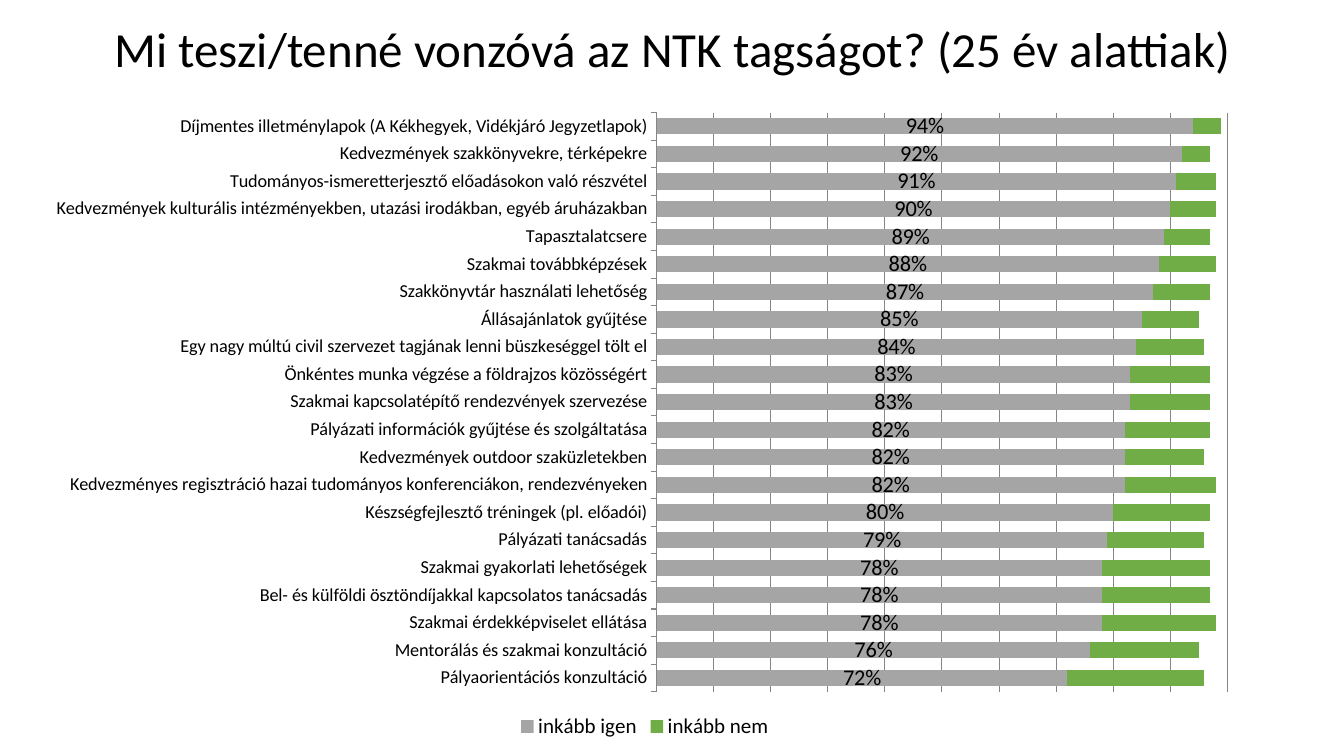
from pptx import Presentation
from pptx.chart.data import CategoryChartData
from pptx.dml.color import RGBColor
from pptx.enum.chart import XL_CHART_TYPE, XL_LEGEND_POSITION, XL_TICK_LABEL_POSITION, XL_TICK_MARK
from pptx.enum.text import MSO_ANCHOR, PP_ALIGN
from pptx.oxml import parse_xml
from pptx.oxml.ns import nsdecls
from pptx.util import Pt

TITLE = "Mi teszi/tenné vonzóvá az NTK tagságot? (25 év alattiak)"
NAMES = ("inkább igen", "inkább nem")
ROWS = [  # top to bottom: reason, yes, no
    ("Díjmentes illetménylapok (A Kékhegyek, Vidékjáró Jegyzetlapok)", 0.94, 0.05),
    ("Kedvezmények szakkönyvekre, térképekre", 0.92, 0.05),
    ("Tudományos-ismeretterjesztő előadásokon való részvétel", 0.91, 0.07),
    ("Kedvezmények kulturális intézményekben, utazási irodákban, egyéb áruházakban", 0.90, 0.08),
    ("Tapasztalatcsere", 0.89, 0.08),
    ("Szakmai továbbképzések", 0.88, 0.10),
    ("Szakkönyvtár használati lehetőség", 0.87, 0.10),
    ("Állásajánlatok gyűjtése", 0.85, 0.10),
    ("Egy nagy múltú civil szervezet tagjának lenni büszkeséggel tölt el", 0.84, 0.12),
    ("Önkéntes munka végzése a földrajzos közösségért", 0.83, 0.14),
    ("Szakmai kapcsolatépítő rendezvények szervezése", 0.83, 0.14),
    ("Pályázati információk gyűjtése és szolgáltatása", 0.82, 0.15),
    ("Kedvezmények outdoor szaküzletekben", 0.82, 0.14),
    ("Kedvezményes regisztráció hazai tudományos konferenciákon, rendezvényeken", 0.82, 0.16),
    ("Készségfejlesztő tréningek (pl. előadói)", 0.80, 0.17),
    ("Pályázati tanácsadás", 0.79, 0.17),
    ("Szakmai gyakorlati lehetőségek", 0.78, 0.19),
    ("Bel- és külföldi ösztöndíjakkal kapcsolatos tanácsadás", 0.78, 0.19),
    ("Szakmai érdekképviselet ellátása", 0.78, 0.20),
    ("Mentorálás és szakmai konzultáció", 0.76, 0.19),
    ("Pályaorientációs konzultáció", 0.72, 0.24),
]
PLOT = {"x": 0.51, "y": 0.02, "w": 0.47, "h": 0.9}  # shares of the chart frame

FACE = "Calibri"
BLACK = RGBColor(0x00, 0x00, 0x00)
LINE = RGBColor(0x86, 0x86, 0x86)
FILLS = (RGBColor(0xA5, 0xA5, 0xA5), RGBColor(0x70, 0xAD, 0x47))
PX = 9525  # 96 px to the inch


def box(*px):
    """Turn px lengths into EMU."""
    return [n * PX for n in px]


def style(font, size):
    font.name, font.size, font.bold = FACE, Pt(size), False
    font.color.rgb = BLACK


def add_title(slide):
    frame = slide.shapes.add_textbox(*box(89, 12, 1104, 74)).text_frame
    frame.word_wrap = True
    frame.vertical_anchor = MSO_ANCHOR.MIDDLE
    para = frame.paragraphs[0]
    para.text = TITLE
    para.alignment = PP_ALIGN.CENTER
    para.line_spacing = 0.9
    style(para.runs[0].font, 35)


def set_plot(chart):
    """Fix the inner plot area inside the chart frame."""
    parts = "".join(f'<c:{key} val="{val}"/>' for key, val in PLOT.items())
    area = chart.element.chart.plotArea
    for old in area.findall("{*}layout"):
        area.remove(old)
    area.insert(0, parse_xml(
        f'<c:layout {nsdecls("c")}><c:manualLayout><c:layoutTarget val="inner"/>'
        f'<c:xMode val="edge"/><c:yMode val="edge"/>{parts}</c:manualLayout></c:layout>'))


def add_bars(slide):
    data = CategoryChartData(number_format="0%")
    reasons, *votes = zip(*reversed(ROWS))
    data.categories = reasons
    for name, vals in zip(NAMES, votes):
        data.add_series(name, vals)
    chart = slide.shapes.add_chart(
        XL_CHART_TYPE.BAR_STACKED, *box(36, 95, 1156, 613), data).chart
    chart.has_title = False
    style(chart.font, 10)
    set_plot(chart)

    plot = chart.plots[0]
    plot.gap_width, plot.overlap = 70, 100
    plot.vary_by_categories = False
    for series, fill in zip(plot.series, FILLS):
        series.format.fill.solid()
        series.format.fill.fore_color.rgb = fill
    labels = plot.series[0].data_labels
    labels.show_value = True
    labels.number_format, labels.number_format_is_linked = "0%", False
    style(labels.font, 16)

    cat = chart.category_axis
    cat.major_tick_mark = XL_TICK_MARK.OUTSIDE
    cat.tick_label_position = XL_TICK_LABEL_POSITION.LOW
    cat.has_major_gridlines = False
    style(cat.tick_labels.font, 13)
    val = chart.value_axis
    val.minimum_scale, val.maximum_scale, val.major_unit = 0, 1, 0.1
    val.has_major_gridlines = True
    val.visible = False
    for line in (cat.format.line, val.major_gridlines.format.line):
        line.color.rgb = LINE
        line.width = Pt(0.75)

    chart.has_legend = True
    chart.legend.position = XL_LEGEND_POSITION.BOTTOM
    chart.legend.include_in_layout = False
    style(chart.legend.font, 15)


def main():
    deck = Presentation()
    deck.slide_width, deck.slide_height = box(1280, 720)
    slide = deck.slides.add_slide(deck.slide_layouts[6])
    add_bars(slide)
    add_title(slide)
    deck.save("out.pptx")


if __name__ == "__main__":
    main()
